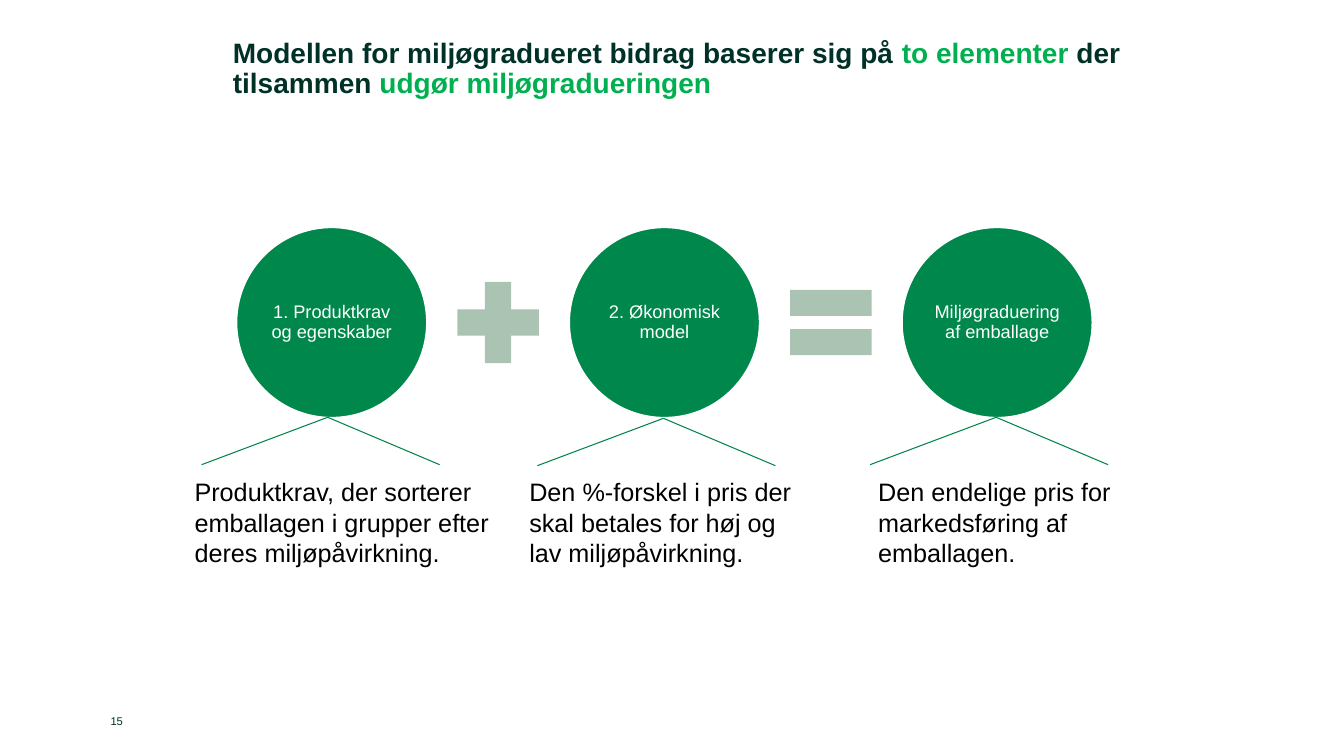
from pptx import Presentation
from pptx.dml.color import RGBColor
from pptx.enum.shapes import MSO_CONNECTOR, MSO_SHAPE
from pptx.enum.text import MSO_ANCHOR, PP_ALIGN
from pptx.oxml.ns import qn
from pptx.util import Inches, Pt
from lxml import etree

WHITE = RGBColor(0xFF, 0xFF, 0xFF)
BLACK = RGBColor(0x00, 0x00, 0x00)
DARK = RGBColor(0x00, 0x31, 0x27)
BRIGHT = RGBColor(0x00, 0xB0, 0x50)
GREEN = RGBColor(0x00, 0x87, 0x4B)
LINE_GREEN = RGBColor(0x00, 0x84, 0x49)
SAGE = RGBColor(0xAB, 0xC3, 0xB2)

FIRST_LEFT, PITCH, DIAMETER, CIRCLE_TOP = 2.34, 3.3, 1.9, 2.25
OPERATOR_SIZE, OPERATOR_GAP = 1.1, 0.15
ROOF_LEFT, ROOF_RIGHT, ROOF_HEIGHT = 1.25, 1.11, 0.47

TITLE = [
    ("Modellen for miljøgradueret bidrag baserer sig på ", DARK),
    ("to elementer ", BRIGHT),
    ("der tilsammen ", DARK),
    ("udgør miljøgradueringen", BRIGHT),
]
# label, explanation, explanation left and width, roof apex
ELEMENTS = [
    ("1. Produktkrav og egenskaber",
     "Produktkrav, der sorterer emballagen i grupper efter deres miljøpåvirkning.",
     1.93, 2.93, (3.25, 4.14)),
    ("2. Økonomisk model",
     "Den %-forskel i pris der skal betales for høj og lav miljøpåvirkning.",
     5.25, 2.66, (6.58, 4.15)),
    ("Miljøgraduering af emballage",
     "Den endelige pris for markedsføring af emballagen.",
     8.71, 2.66, (9.88, 4.14)),
]
OPERATORS = [MSO_SHAPE.MATH_PLUS, MSO_SHAPE.MATH_EQUAL]


def set_frame(tf, inset, anchor):
    """Wrap a text frame and set its equal insets and anchor."""
    tf.word_wrap = True
    tf.margin_left = tf.margin_right = Inches(inset)
    tf.margin_top = tf.margin_bottom = Inches(inset)
    tf.vertical_anchor = anchor


def add_runs(p, runs, size, bold=False):
    """Add coloured runs to a paragraph."""
    for text, color in runs:
        r = p.add_run()
        r.text = text
        r.font.name = "Arial"
        r.font.size = Pt(size)
        r.font.bold = bold
        r.font.color.rgb = color


def add_text(s, box, runs, size, bold=False, anchor=MSO_ANCHOR.TOP,
             align=PP_ALIGN.LEFT, spacing=1.0):
    """Add a text box without insets."""
    tf = s.shapes.add_textbox(*map(Inches, box)).text_frame
    set_frame(tf, 0, anchor)
    p = tf.paragraphs[0]
    p.alignment = align
    p.line_spacing = spacing
    add_runs(p, runs, size, bold)


def add_preset(s, kind, left, top, size, color):
    """Add a filled square-bounded shape without outline or shadow."""
    sp = s.shapes.add_shape(kind, Inches(left), Inches(top), Inches(size), Inches(size))
    sp.shadow.inherit = False
    sp.fill.solid()
    sp.fill.fore_color.rgb = color
    sp.line.fill.background()
    return sp


def add_circle(s, left, label):
    """Add a labelled circle with a white outline."""
    sp = add_preset(s, MSO_SHAPE.OVAL, left, CIRCLE_TOP, DIAMETER, GREEN)
    sp.line.color.rgb = WHITE
    sp.line.width = Pt(2)
    set_frame(sp.text_frame, 0.02, MSO_ANCHOR.MIDDLE)
    p = sp.text_frame.paragraphs[0]
    p.alignment = PP_ALIGN.CENTER
    p.line_spacing = 0.9
    add_runs(p, [(label, WHITE)], 13)


def add_roof(s, x, y):
    """Add two thin lines sloping down from an apex."""
    for dx in (-ROOF_LEFT, ROOF_RIGHT):
        line = s.shapes.add_connector(MSO_CONNECTOR.STRAIGHT, Inches(x), Inches(y),
                                      Inches(x + dx), Inches(y + ROOF_HEIGHT))
        line.line.color.rgb = LINE_GREEN
        line.line.width = Pt(0.75)
        etree.SubElement(line._element.spPr, qn("a:effectLst"))


def main():
    """Build the slide and save it."""
    prs = Presentation()
    prs.slide_width, prs.slide_height = Inches(13.33), Inches(7.5)
    s = prs.slides.add_slide(prs.slide_layouts[6])
    add_text(s, (2.31, 0.39, 8.93, 0.51), TITLE, 20, bold=True, spacing=0.9)
    for i, (label, explanation, left, width, apex) in enumerate(ELEMENTS):
        add_circle(s, FIRST_LEFT + i * PITCH, label)
        add_text(s, (left, 4.73, width, 0.91), [(explanation, BLACK)], 18)
        add_roof(s, *apex)
    for i, kind in enumerate(OPERATORS):
        add_preset(s, kind, FIRST_LEFT + i * PITCH + DIAMETER + OPERATOR_GAP,
                   CIRCLE_TOP + (DIAMETER - OPERATOR_SIZE) / 2, OPERATOR_SIZE, SAGE)
    add_text(s, (0.89, 7, 0.33, 0.22), [("15", DARK)], 8,
             anchor=MSO_ANCHOR.BOTTOM, align=PP_ALIGN.RIGHT)
    prs.save("out.pptx")


if __name__ == "__main__":
    main()
